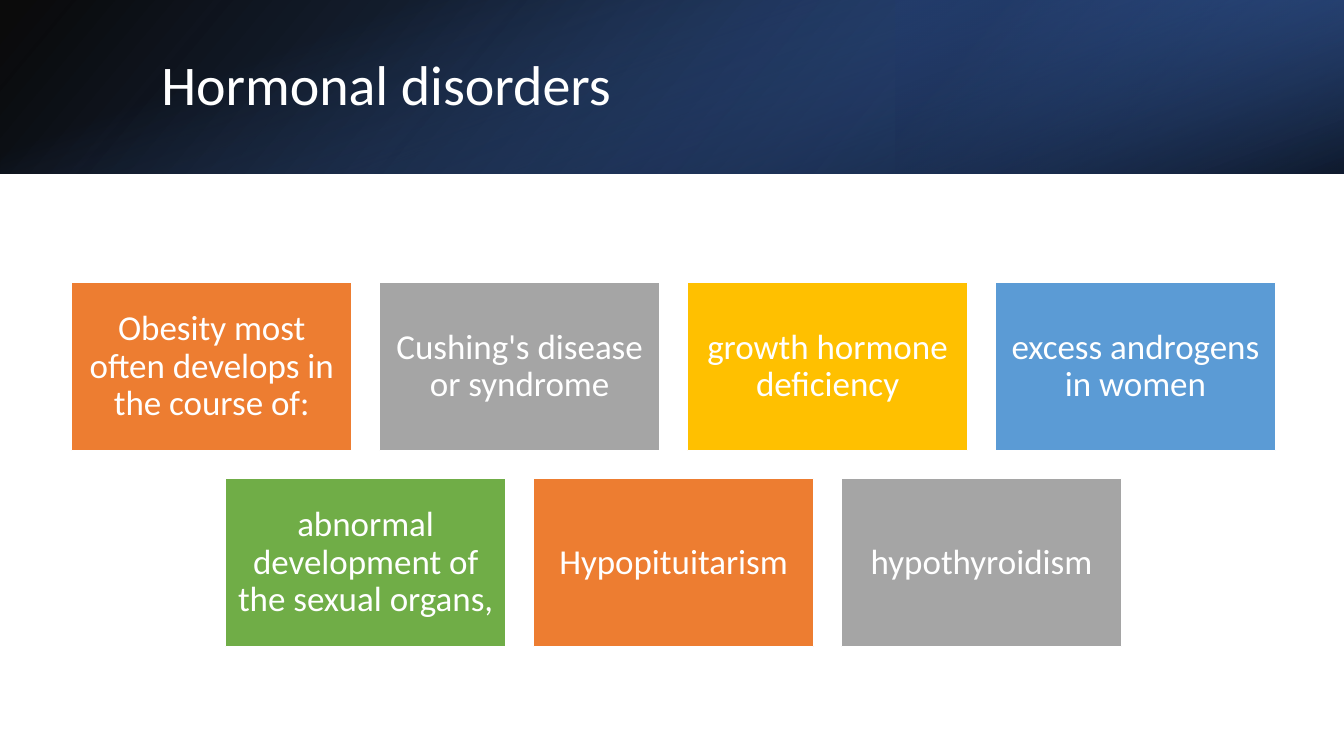
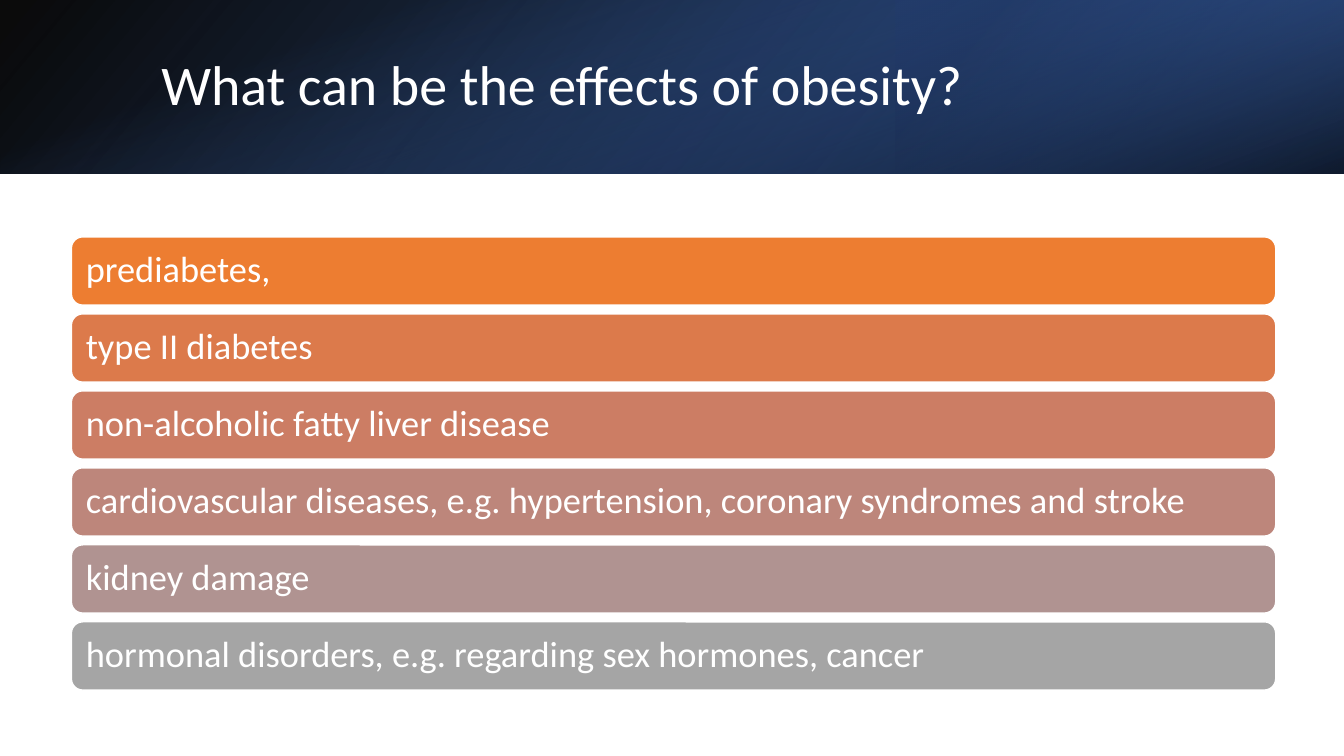
from lxml import etree
from pptx import Presentation
from pptx.dml.color import RGBColor
from pptx.enum.shapes import MSO_SHAPE as Shape
from pptx.enum.text import MSO_ANCHOR as Anchor, PP_ALIGN as Align
from pptx.oxml.ns import qn
from pptx.util import Cm, Pt

FONT = "Calibri"
WHITE = RGBColor(0xFF, 0xFF, 0xFF)
BLACK = RGBColor(0x00, 0x00, 0x00)
NAVY = RGBColor(0x20, 0x38, 0x64)
DEEP_BLUE = RGBColor(0x2F, 0x55, 0x97)
BLUE = RGBColor(0x44, 0x72, 0xC4)
SKY = RGBColor(0x5B, 0x9B, 0xD5)
ORANGE = RGBColor(0xED, 0x7D, 0x31)
GRAY = RGBColor(0xA5, 0xA5, 0xA5)
GOLD = RGBColor(0xFF, 0xC0, 0x00)
GREEN = RGBColor(0x70, 0xAD, 0x47)
TERRACOTTA = RGBColor(0xDC, 0x7A, 0x4B)
CORAL = RGBColor(0xCC, 0x7D, 0x64)
DUSTY_ROSE = RGBColor(0xBD, 0x86, 0x7B)
MAUVE = RGBColor(0xB0, 0x93, 0x91)

SLIDE_W, SLIDE_H = Cm(33.87), Cm(19.05)
BAND_H = Cm(4.38)
MARGIN = Cm(1.8)
TITLE_ONLY = 5

DISORDERS = [
    [
        ("Obesity most often develops in the course of:", ORANGE),
        ("Cushing's disease or syndrome", GRAY),
        ("growth hormone deficiency", GOLD),
        ("excess androgens in women", SKY),
    ],
    [
        ("abnormal development of the sexual organs,", GREEN),
        ("Hypopituitarism", ORANGE),
        ("hypothyroidism", GRAY),
    ],
]
EFFECTS = [
    ("prediabetes,", ORANGE),
    ("type II diabetes", TERRACOTTA),
    ("non-alcoholic fatty liver disease", CORAL),
    ("cardiovascular diseases, e.g. hypertension, coronary syndromes and stroke",
     DUSTY_ROSE),
    ("kidney damage", MAUVE),
    ("hormonal disorders, e.g. regarding sex hormones, cancer", GRAY),
]


def set_text(shape, text, size, align):
    frame = shape.text_frame
    frame.text = text
    frame.word_wrap = True
    frame.vertical_anchor = Anchor.MIDDLE
    paragraph = frame.paragraphs[0]
    paragraph.alignment = align
    paragraph.line_spacing = 0.9
    font = paragraph.runs[0].font
    font.name, font.size, font.color.rgb = FONT, Pt(size), WHITE


def fill_gradient(shape, angle, stops):
    """Fill with (position %, colour, opacity %) stops, angle clockwise."""
    shape.fill.gradient()
    gradient = shape.element.spPr.find(qn("a:gradFill"))
    for child in list(gradient):
        gradient.remove(child)
    stop_list = etree.SubElement(gradient, qn("a:gsLst"))
    for position, color, opacity in stops:
        stop = etree.SubElement(stop_list, qn("a:gs"), pos=str(position * 1000))
        rgb = etree.SubElement(stop, qn("a:srgbClr"), val=str(color))
        etree.SubElement(rgb, qn("a:alpha"), val=str(opacity * 1000))
    etree.SubElement(gradient, qn("a:lin"), ang=str(angle * 60000), scaled="0")


def add_band_layer(slide, box, angle, stops, rotation=0, flipped=False):
    layer = slide.shapes.add_shape(Shape.RECTANGLE, *box)
    layer.shadow.inherit = False
    layer.line.fill.background()
    layer.rotation = rotation
    if flipped:
        layer.element.spPr.find(qn("a:xfrm")).set("flipH", "1")
    fill_gradient(layer, angle, stops)


def add_band(slide):
    add_band_layer(slide, (0, 0, SLIDE_W, BAND_H), 140,
                   [(0, BLACK, 96), (100, DEEP_BLUE, 100)], flipped=True)
    glow_w = SLIDE_W // 3
    add_band_layer(slide, (SLIDE_W - glow_w, 0, glow_w, BAND_H), 320,
                   [(19, NAVY, 68), (100, BLUE, 79)], rotation=180, flipped=True)
    # A quarter turn about its centre lays the upright shade over the band
    offset = (SLIDE_W - BAND_H) // 2
    add_band_layer(slide, (offset, -offset, BAND_H, SLIDE_W), 340,
                   [(23, BLUE, 0), (99, BLACK, 74)], rotation=90)


def add_titled_slide(prs, text):
    slide = prs.slides.add_slide(prs.slide_layouts[TITLE_ONLY])
    add_band(slide)
    title = slide.shapes.title
    title.left, title.top = Cm(3.81), Cm(0.97)
    title.width, title.height = Cm(27.89), Cm(2.44)
    set_text(title, text, 40, Align.LEFT)
    title.element.getparent().append(title.element)  # bring above the band
    return slide


def add_panel(slide, kind, box, item, size, align, inset):
    text, color = item
    panel = slide.shapes.add_shape(kind, *box)
    panel.shadow.inherit = False
    panel.fill.solid()
    panel.fill.fore_color.rgb = color
    panel.line.color.rgb = WHITE
    panel.line.width = Pt(1)
    frame = panel.text_frame
    frame.margin_left = frame.margin_right = inset
    frame.margin_top = frame.margin_bottom = Cm(0.25)
    set_text(panel, text, size, align)


def add_card_rows(slide, rows):
    """Lay out rows of equal cards, shorter rows centred under the longest."""
    card_w, card_h = Cm(7.07), Cm(4.24)
    pitch_x, pitch_y = Cm(7.76), Cm(4.94)
    longest = max(len(row) for row in rows)
    for row_index, row in enumerate(rows):
        left = MARGIN + (longest - len(row)) * pitch_x // 2
        top = Cm(7.12) + row_index * pitch_y
        for column, item in enumerate(row):
            box = (left + column * pitch_x, top, card_w, card_h)
            add_panel(slide, Shape.RECTANGLE, box, item, 25, Align.CENTER, Cm(0.25))


def add_bars(slide, items):
    for index, item in enumerate(items):
        box = (MARGIN, Cm(5.97) + index * Cm(1.94), Cm(30.35), Cm(1.72))
        add_panel(slide, Shape.ROUNDED_RECTANGLE, box, item, 26, Align.LEFT, Cm(0.28))


def main():
    prs = Presentation()
    prs.slide_width, prs.slide_height = SLIDE_W, SLIDE_H
    add_card_rows(add_titled_slide(prs, "Hormonal disorders"), DISORDERS)
    add_bars(add_titled_slide(prs, "What can be the effects of obesity?"), EFFECTS)
    prs.save("out.pptx")


if __name__ == "__main__":
    main()
